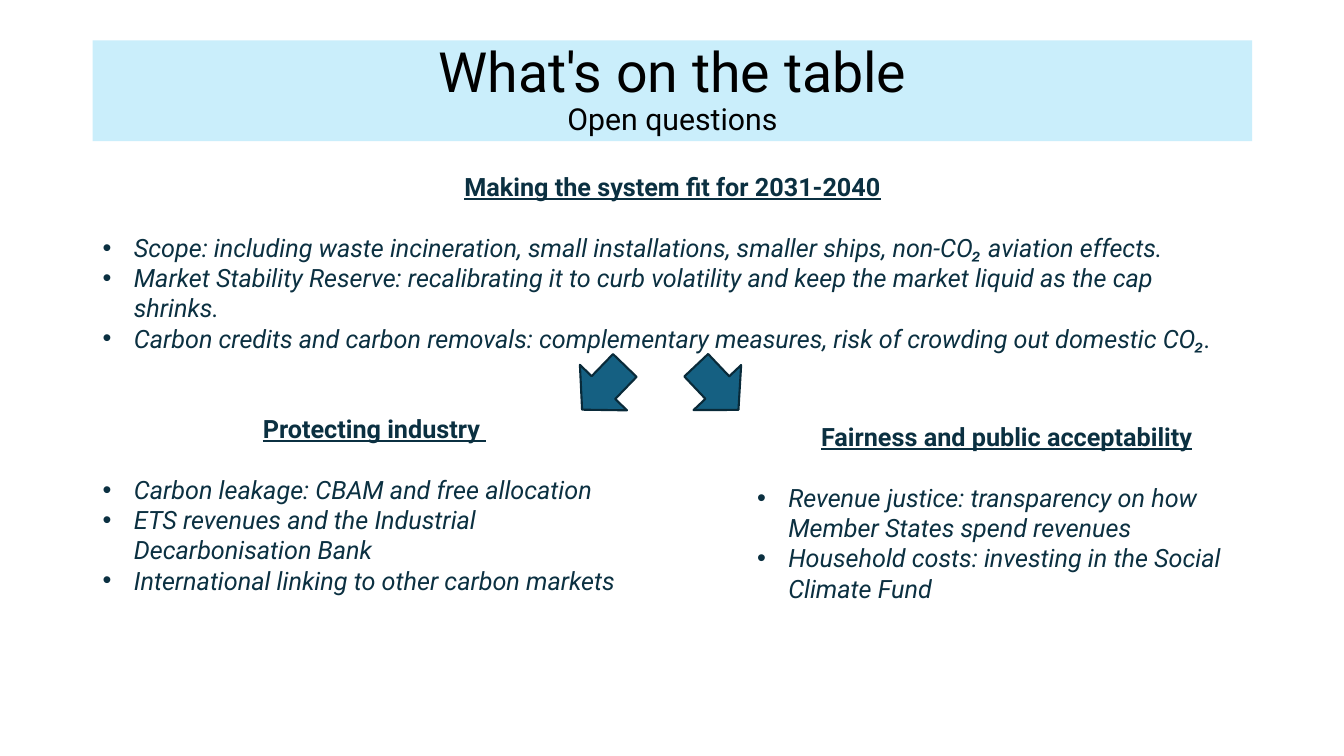
from lxml import etree
from pptx import Presentation
from pptx.dml.color import RGBColor
from pptx.enum.shapes import MSO_SHAPE as Shape
from pptx.enum.text import MSO_ANCHOR as Anchor, MSO_AUTO_SIZE as AutoSize, PP_ALIGN as Align
from pptx.oxml.ns import qn
from pptx.util import Inches, Pt

# Content
FONT = "Roboto"
COLORS = {"banner": "CAEEFB", "title": "000000", "text": "0B3041",
          "arrow": "156082", "arrow_line": "092A39"}
TITLE = [("What's on the table", 39.6), ("Open questions", 21.6)]
BANNER = (0.92, 0.4, 11.5, 1)
SECTIONS = [
    ((0.92, 1.65, 11.5, 1.92), "Making the system fit for 2031-2040", [
        "Scope: including waste incineration, small installations, smaller ships, "
        "non-CO₂ aviation effects.",
        "Market Stability Reserve: recalibrating it to curb volatility and keep "
        "the market liquid as the cap shrinks.",
        "Carbon credits and carbon removals: complementary measures, risk of "
        "crowding out domestic CO₂."]),
    ((7.41, 4.13, 5.15, 1.92), "Fairness and public acceptability", [
        "Revenue justice: transparency on how Member States spend revenues",
        "Household costs: investing in the Social Climate Fund"]),
    ((0.92, 4.05, 5.59, 2.22), "Protecting industry ", [
        "Carbon leakage: CBAM and free allocation",
        "ETS revenues and the Industrial Decarbonisation Bank",
        "International linking to other carbon markets"]),
]
ARROWS = [(5.66, 44), (6.79, 316.6)]  # left, rotation
ARROW_TOP, ARROW_WIDTH, ARROW_HEIGHT = 3.54, 0.65, 0.61


def color(name):
    return RGBColor.from_string(COLORS[name])


def add_filled(slide, kind, frame, fill):
    shape = slide.shapes.add_shape(kind, *map(Inches, frame))
    shape.shadow.inherit = False
    shape.fill.solid()
    shape.fill.fore_color.rgb = color(fill)
    return shape


def add_span(para, text, size, ink, **style):
    span = para.add_run()
    span.text = text
    span.font.name, span.font.size = FONT, Pt(size)
    span.font.color.rgb = color(ink)
    for key, value in style.items():
        setattr(span.font, key, value)


def add_bullet(para):
    props = para._p.get_or_add_pPr()
    props.set("marL", str(Inches(0.31)))
    props.set("indent", str(-Inches(0.31)))
    etree.SubElement(props, qn("a:buFont")).set("typeface", "Arial")
    etree.SubElement(props, qn("a:buChar")).set("char", "•")


def add_section(slide, frame, heading, points):
    box = slide.shapes.add_textbox(*map(Inches, frame)).text_frame
    box.word_wrap = True
    box.auto_size = AutoSize.SHAPE_TO_FIT_TEXT
    para = box.paragraphs[0]
    para.alignment = Align.CENTER
    para.space_after = Pt(22)
    add_span(para, heading, 18, "text", bold=True, underline=True)
    for point in points:
        para = box.add_paragraph()
        add_bullet(para)
        add_span(para, point, 18, "text", italic=True)


def main():
    deck = Presentation()
    deck.slide_width, deck.slide_height = Inches(13.33), Inches(7.5)
    slide = deck.slides.add_slide(deck.slide_layouts[6])

    # Title banner
    banner = add_filled(slide, Shape.ROUNDED_RECTANGLE, BANNER, "banner")
    banner.adjustments[0] = 0
    banner.line.fill.background()
    banner.text_frame.word_wrap = True
    banner.text_frame.vertical_anchor = Anchor.MIDDLE
    para = banner.text_frame.paragraphs[0]
    para.alignment = Align.CENTER
    para.line_spacing = 0.9
    for number, (text, size) in enumerate(TITLE):
        if number:
            para.add_line_break()
        add_span(para, text, size, "title")

    # Text sections
    for section in SECTIONS:
        add_section(slide, *section)

    # Arrows to the two lower sections
    for left, rotation in ARROWS:
        frame = (left, ARROW_TOP, ARROW_WIDTH, ARROW_HEIGHT)
        arrow = add_filled(slide, Shape.DOWN_ARROW, frame, "arrow")
        arrow.rotation = rotation
        arrow.line.color.rgb = color("arrow_line")
        arrow.line.width = Pt(1.5)

    deck.save("out.pptx")


if __name__ == "__main__":
    main()
